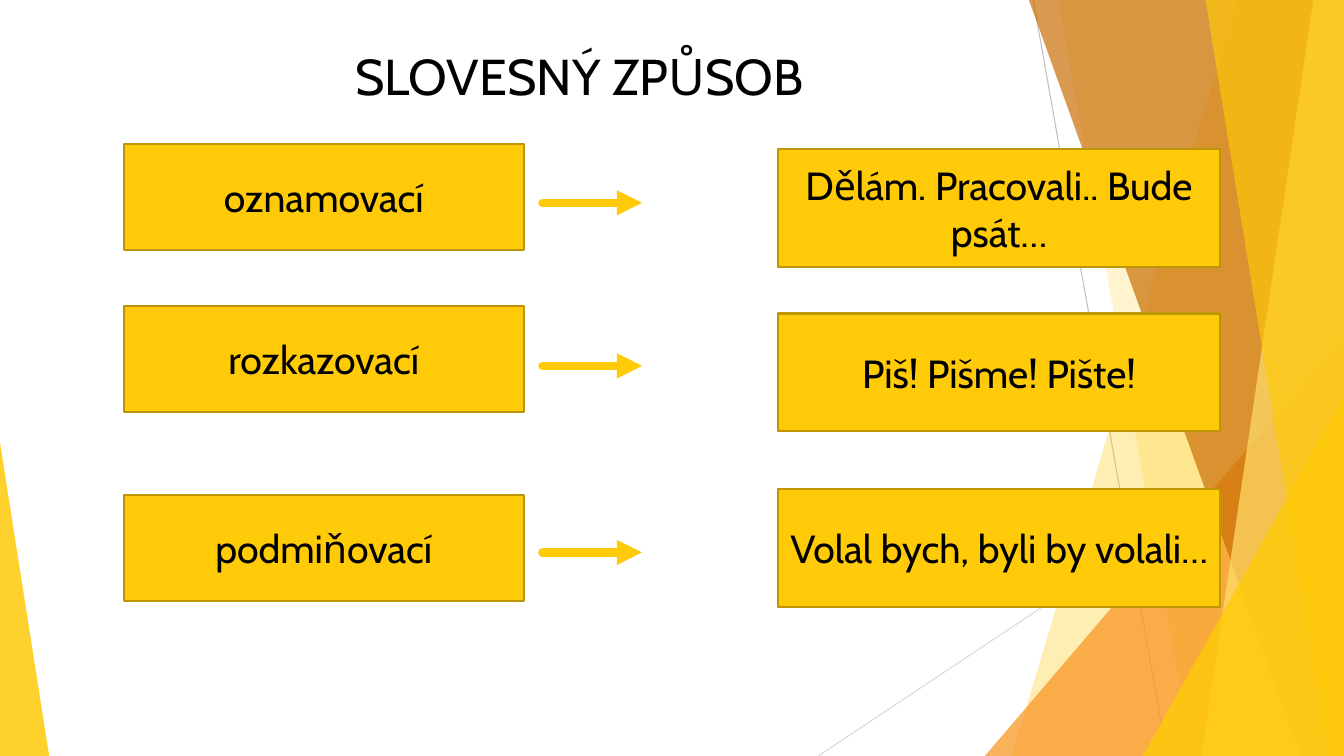
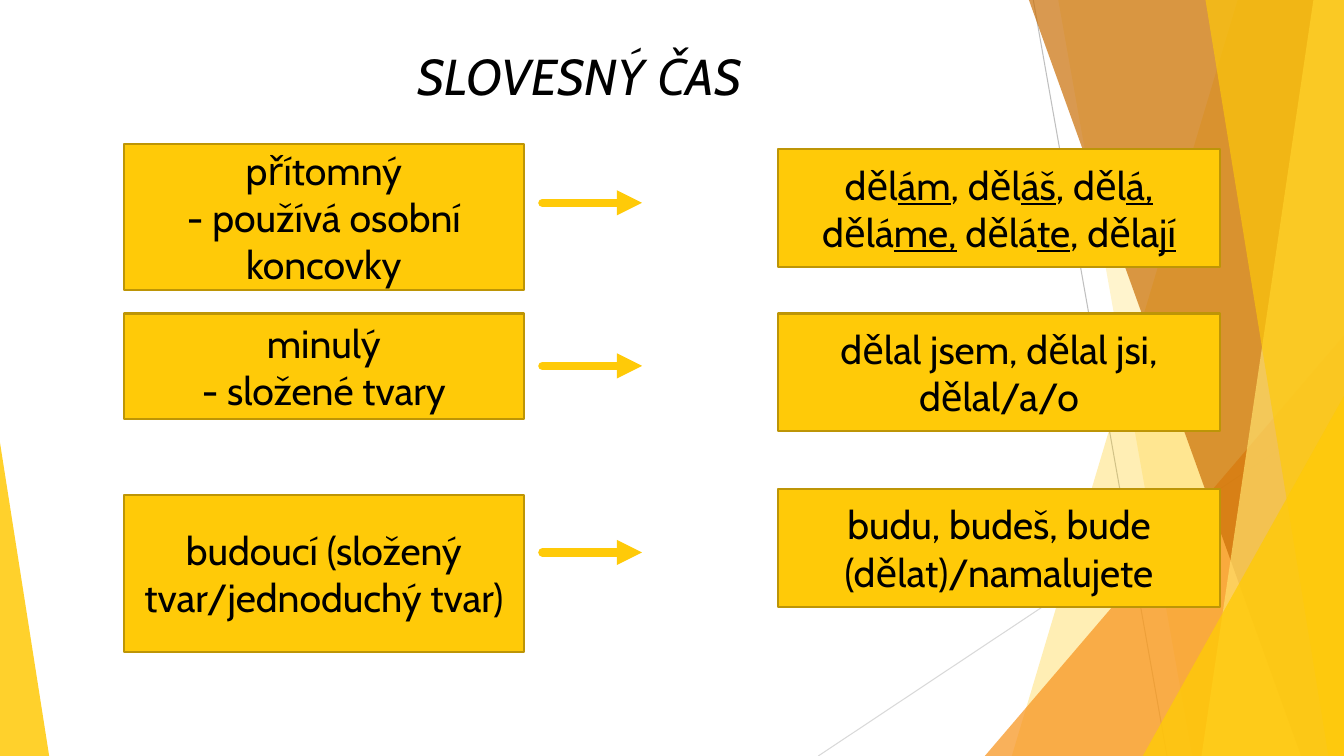
from lxml.etree import SubElement
from pptx import Presentation
from pptx.dml.color import RGBColor
from pptx.enum.shapes import MSO_CONNECTOR as Connector, MSO_SHAPE as Preset
from pptx.enum.text import PP_ALIGN as Align
from pptx.oxml.ns import qn
from pptx.util import Cm, Pt

WIDTH, HEIGHT = 33.87, 19.05
GOLD, DARK_GOLD, PALE_GOLD = "FFCA08", "BD9506", "FFDF6B"
ORANGE, BROWN, BLACK = "F8931D", "CA6F06", "000000"
rgb = RGBColor.from_string

TITLE_FORMAT = {"name": "Cabin", "size": Pt(36)}
CARD_FORMAT = {"name": "Cabin", "size": Pt(28)}

HAIRLINES = [
    (26.04, 0, 29.41, HEIGHT, "BFBFBF"),
    (WIDTH, 10.24, 20.62, HEIGHT, "D9D9D9"),
]
BACKDROP = [
    ("band", (31.19, 25.5), GOLD, 30),
    ("band", (26.67, 30.05), GOLD, 20),
    ("triangle", (24.82, 8.46, WIDTH, 1), ORANGE, 72),
    ("band", (25.93, 32.79), BROWN, 70),
    ("band", (33.1, 30.28), PALE_GOLD, 70),
    ("band", (30.38, 33.48), GOLD, 65),
    ("triangle", (28.8, 9.98, WIDTH, 1), GOLD, 80),
    ("triangle", (0, 11.15, 1.24, 0), GOLD, 85),
]

ARROW_ROWS = [5.11, 9.22, 13.92]
EXAMPLE_TOPS = [3.76, 7.9, 12.32]
SLIDES = [
    {
        "title": "SLOVESNÝ ZPŮSOB",
        "title_format": TITLE_FORMAT,
        "terms": [
            (3.63, 2.67, "oznamovací"),
            (7.72, 2.67, "rozkazovací"),
            (12.47, 2.67, "podmiňovací"),
        ],
        "examples": [
            "Dělám. Pracovali.. Bude psát…",
            "Piš! Pišme! Pište!",
            "Volal bych, byli by volali…",
        ],
    },
    {
        "title": "SLOVESNÝ ČAS",
        "title_format": {**TITLE_FORMAT, "italic": True},
        "terms": [
            (3.63, 3.68, "přítomný\n- používá osobní koncovky"),
            (7.9, 2.67, "minulý\n- složené tvary"),
            (12.47, 3.96, "budoucí (složený tvar/jednoduchý tvar)"),
        ],
        "examples": [
            "děl_ám_, děl_áš_, děl_á, _dělá_me,_ dělá_te_, děla_jí_",
            "dělal jsem, dělal jsi, dělal/a/o",
            "budu, budeš, bude (dělat)/namalujete",
        ],
    },
]


def paint(shape, colour, alpha=100, outline=None):
    shape.shadow.inherit = False
    shape.fill.solid()
    shape.fill.fore_color.rgb = rgb(colour)
    if alpha < 100:
        fill_colour = shape.element.spPr.find(qn("a:solidFill")).find(qn("a:srgbClr"))
        SubElement(fill_colour, qn("a:alpha"), val=str(alpha * 1000))
    if outline:
        shape.line.color.rgb = rgb(outline)
        shape.line.width = Pt(1.5)
    else:
        shape.line.fill.background()


def draw_line(shapes, ends, colour, weight):
    line = shapes.add_connector(Connector.STRAIGHT, *map(Cm, ends))
    line.line.color.rgb = rgb(colour)
    line.line.width = Pt(weight)
    SubElement(line.element.spPr, qn("a:effectLst"))
    return line


prs = Presentation()
prs.slide_width, prs.slide_height = Cm(WIDTH), Cm(HEIGHT)

for content in SLIDES:
    shapes = prs.slides.add_slide(prs.slide_layouts[6]).shapes

    for *ends, colour in HAIRLINES:
        draw_line(shapes, ends, colour, 0.75)

    for kind, geometry, colour, alpha in BACKDROP:
        if kind == "band":
            top_x, bottom_x = geometry
            corners = [(WIDTH, 0), (WIDTH, HEIGHT), (bottom_x, HEIGHT)]
            outline = shapes.build_freeform(Cm(top_x), 0)
            outline.add_line_segments([(Cm(x), Cm(y)) for x, y in corners])
            facet = outline.convert_to_shape()
        else:
            left, top, right, apex = geometry
            facet = shapes.add_shape(
                Preset.ISOSCELES_TRIANGLE,
                Cm(left), Cm(top), Cm(right - left), Cm(HEIGHT - top),
            )
            facet.adjustments[0] = apex
        paint(facet, colour, alpha)

    title = shapes.add_textbox(0, Cm(1.02), Cm(29.21), Cm(3.68))
    title.text_frame.word_wrap = True
    texts = [(title, content["title"], content["title_format"])]

    for y in ARROW_ROWS:
        arrow = draw_line(shapes, (13.67, y, 16.18, y), GOLD, 6)
        stroke = arrow.line._get_or_add_ln()
        stroke.set("cap", "rnd")
        SubElement(stroke, qn("a:tailEnd"), type="triangle")

    cards = [(3.12, top, 10.08, height, text) for top, height, text in content["terms"]]
    cards += [
        (19.61, top, 11.13, 2.97, text)
        for top, text in zip(EXAMPLE_TOPS, content["examples"])
    ]
    for *box, text in cards:
        card = shapes.add_shape(Preset.RECTANGLE, *map(Cm, box))
        paint(card, GOLD, outline=DARK_GOLD)
        texts.append((card, text, CARD_FORMAT))

    for holder, text, text_format in texts:
        frame = holder.text_frame
        for row, line_text in enumerate(text.split("\n")):
            paragraph = frame.add_paragraph() if row else frame.paragraphs[0]
            paragraph.alignment = Align.CENTER
            for part, words in enumerate(line_text.split("_")):
                if not words:
                    continue
                run = paragraph.add_run()
                run.text = words
                run.font.color.rgb = rgb(BLACK)
                for attribute, value in text_format.items():
                    setattr(run.font, attribute, value)
                if part % 2:
                    run.font.underline = True

prs.save("out.pptx")
